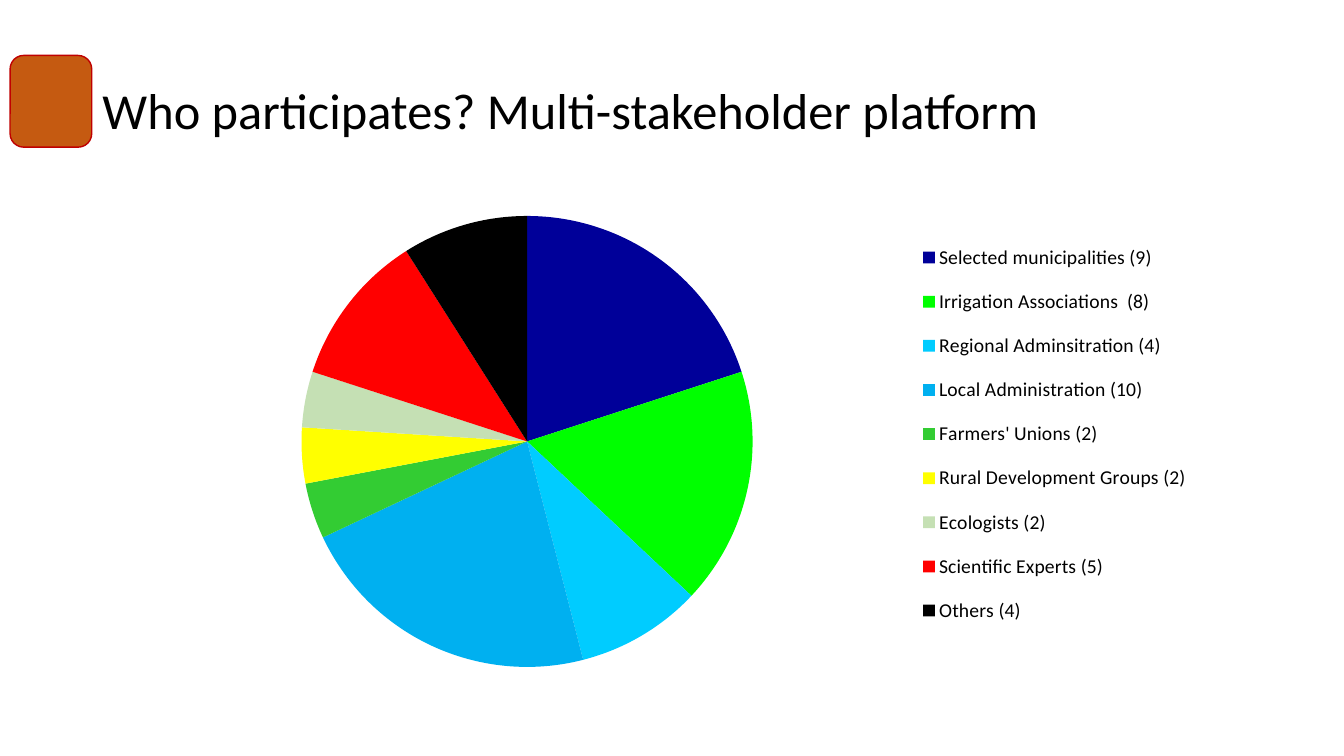
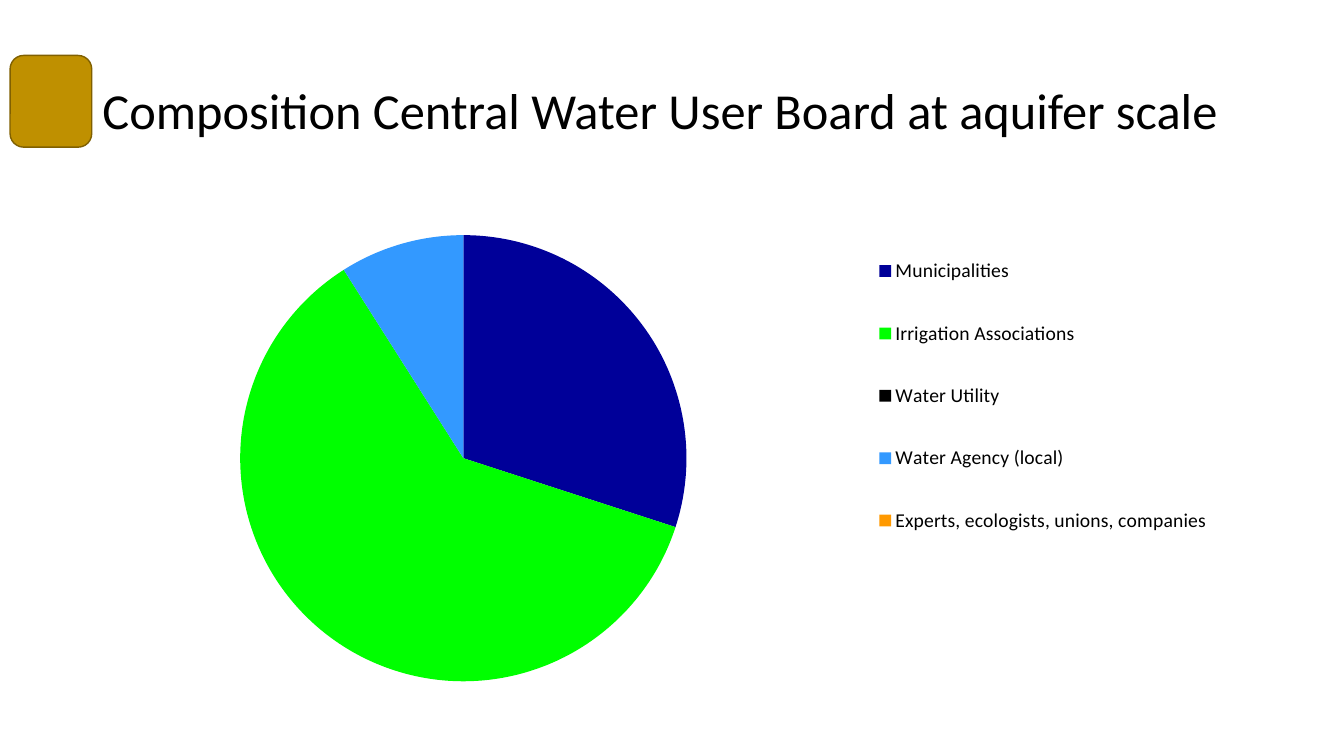
from lxml import etree
from pptx import Presentation
from pptx.chart.data import CategoryChartData
from pptx.dml.color import RGBColor
from pptx.enum.chart import XL_CHART_TYPE, XL_LEGEND_POSITION
from pptx.enum.shapes import MSO_SHAPE
from pptx.enum.text import MSO_ANCHOR, MSO_AUTO_SIZE, PP_ALIGN
from pptx.oxml.ns import qn
from pptx.util import Inches, Pt

PIE = XL_CHART_TYPE.PIE
LEGEND_RIGHT = XL_LEGEND_POSITION.RIGHT
ROUNDED = MSO_SHAPE.ROUNDED_RECTANGLE
MIDDLE = MSO_ANCHOR.MIDDLE
NO_FIT = MSO_AUTO_SIZE.NONE
LEFT = PP_ALIGN.LEFT

BLACK = RGBColor(0x00, 0x00, 0x00)
NAVY = RGBColor(0x00, 0x00, 0x99)
LIME = RGBColor(0x00, 0xFF, 0x00)
CYAN = RGBColor(0x00, 0xCC, 0xFF)
SKY = RGBColor(0x00, 0xB0, 0xF0)
AZURE = RGBColor(0x33, 0x99, 0xFF)
GREEN = RGBColor(0x33, 0xCC, 0x33)
YELLOW = RGBColor(0xFF, 0xFF, 0x00)
SAGE = RGBColor(0xC5, 0xE0, 0xB4)
RED = RGBColor(0xFF, 0x00, 0x00)
ORANGE = RGBColor(0xFF, 0x99, 0x00)
RUST = RGBColor(0xC5, 0x5A, 0x11)
CRIMSON = RGBColor(0xC0, 0x00, 0x00)
GOLD = RGBColor(0xBF, 0x90, 0x00)
BRONZE = RGBColor(0x80, 0x60, 0x00)

COLUMNS, ROWS = 40, 75
TITLE_AREA = (2.75, 4, 34.5, 14.5)
BADGE_AREA = (0.3, 5.5, 2.43, 9.1)
CHART_AREA = (2.75, 20, 34.5, 47.6)

PAGES = [
    {
        "title": "Who participates? Multi-stakeholder platform",
        "badge": (RUST, CRIMSON),
        "slices": [
            ("Selected municipalities (9)", 20, NAVY),
            ("Irrigation Associations  (8)", 17, LIME),
            ("Regional Adminsitration (4)", 9, CYAN),
            ("Local Administration (10)", 22, SKY),
            ("Farmers' Unions (2)", 4, GREEN),
            ("Rural Development Groups (2)", 4, YELLOW),
            ("Ecologists (2)", 4, SAGE),
            ("Scientific Experts (5)", 11, RED),
            ("Others (4)", 9, BLACK),
        ],
        "plot": (0.18, 0.03, 0.39, 0.94),
        "legend": (0.71, 0.05, 0.24, 0.87),
    },
    {
        "title": "Composition Central Water User Board at aquifer scale",
        "badge": (GOLD, BRONZE),
        "slices": [
            ("Municipalities", 30, NAVY),
            ("Irrigation Associations", 61, LIME),
            ("Water Utility", 0, BLACK),
            ("Water Agency (local)", 9, AZURE),
            ("Experts, ecologists, unions, companies", 0, ORANGE),
        ],
        "plot": (0.07, 0.09, 0.5, 0.93),
        "legend": (0.67, 0.04, 0.3, 0.73),
    },
]


def apply(target, **formats):
    for name, value in formats.items():
        setattr(target, name, value)


def set_layout(parent, index, area, inner=False):
    for old in parent.findall(qn("c:layout")):
        parent.remove(old)
    layout = etree.Element(qn("c:layout"))
    manual = etree.SubElement(layout, qn("c:manualLayout"))
    settings = {"layoutTarget": "inner"} if inner else {}
    settings.update(xMode="edge", yMode="edge")
    settings.update(zip("xywh", area))
    for name, value in settings.items():
        etree.SubElement(manual, qn(f"c:{name}"), val=str(value))
    parent.insert(index, layout)


class Deck:
    font = {"name": "Calibri"}
    title_size = Pt(36)
    chart_size = Pt(10)
    legend_size = Pt(14)

    def __init__(self):
        self.deck = Presentation()
        apply(self.deck, slide_width=Inches(13.33), slide_height=Inches(7.5))
        self.page = None

    def place(self, area):
        column = self.deck.slide_width / COLUMNS
        row = self.deck.slide_height / ROWS
        left, top, width, height = area
        return [round(n) for n in (left * column, top * row, width * column, height * row)]

    def style_font(self, font, size):
        apply(font, size=size, **self.font)
        font.color.rgb = BLACK

    def add_page(self):
        self.page = self.deck.slides.add_slide(self.deck.slide_layouts.get_by_name("Title Only"))

    def add_title(self, text):
        title = self.page.shapes.title
        left, top, width, height = self.place(TITLE_AREA)
        apply(title, left=left, top=top, width=width, height=height)
        frame = title.text_frame
        apply(frame, text=text, vertical_anchor=MIDDLE, word_wrap=True, auto_size=NO_FIT)
        para = frame.paragraphs[0]
        apply(para, alignment=LEFT, line_spacing=0.9)
        self.style_font(para.runs[0].font, self.title_size)

    def add_badge(self, fill, outline):
        badge = self.page.shapes.add_shape(ROUNDED, *self.place(BADGE_AREA))
        badge.shadow.inherit = False
        badge.fill.solid()
        badge.fill.fore_color.rgb = fill
        badge.line.color.rgb = outline
        badge.line.width = Pt(1)

    def add_pie(self, slices, plot_area, legend_area):
        names, values, colors = zip(*slices)
        data = CategoryChartData()
        data.categories = names
        data.add_series("Series 1", values)
        chart = self.page.shapes.add_chart(PIE, *self.place(CHART_AREA), data).chart
        apply(chart, has_title=False, has_legend=True)
        self.style_font(chart.font, self.chart_size)
        apply(chart.legend, position=LEGEND_RIGHT, include_in_layout=False)
        self.style_font(chart.legend.font, self.legend_size)
        plot = chart.plots[0]
        plot.vary_by_categories = True
        for index, color in enumerate(colors):
            look = plot.series[0].points[index].format
            look.fill.solid()
            look.fill.fore_color.rgb = color
            look.line.fill.background()
        body = chart.element.find(qn("c:chart"))
        set_layout(body.find(qn("c:plotArea")), 0, plot_area, inner=True)
        set_layout(body.find(qn("c:legend")), 1, legend_area)


def main():
    report = Deck()
    for content in PAGES:
        report.add_page()
        report.add_title(content["title"])
        report.add_badge(*content["badge"])
        report.add_pie(content["slices"], content["plot"], content["legend"])
    report.deck.save("out.pptx")


if __name__ == "__main__":
    main()
